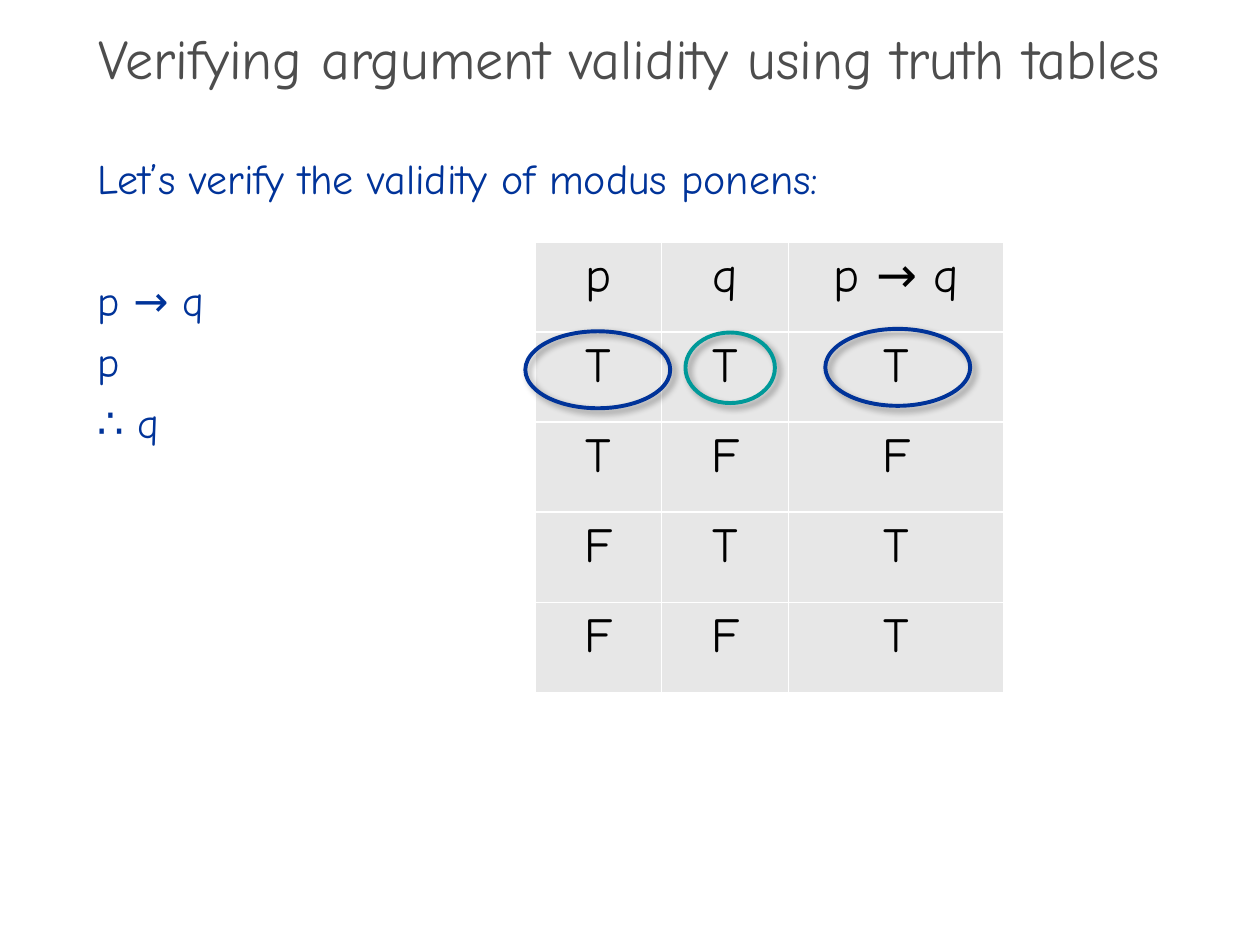
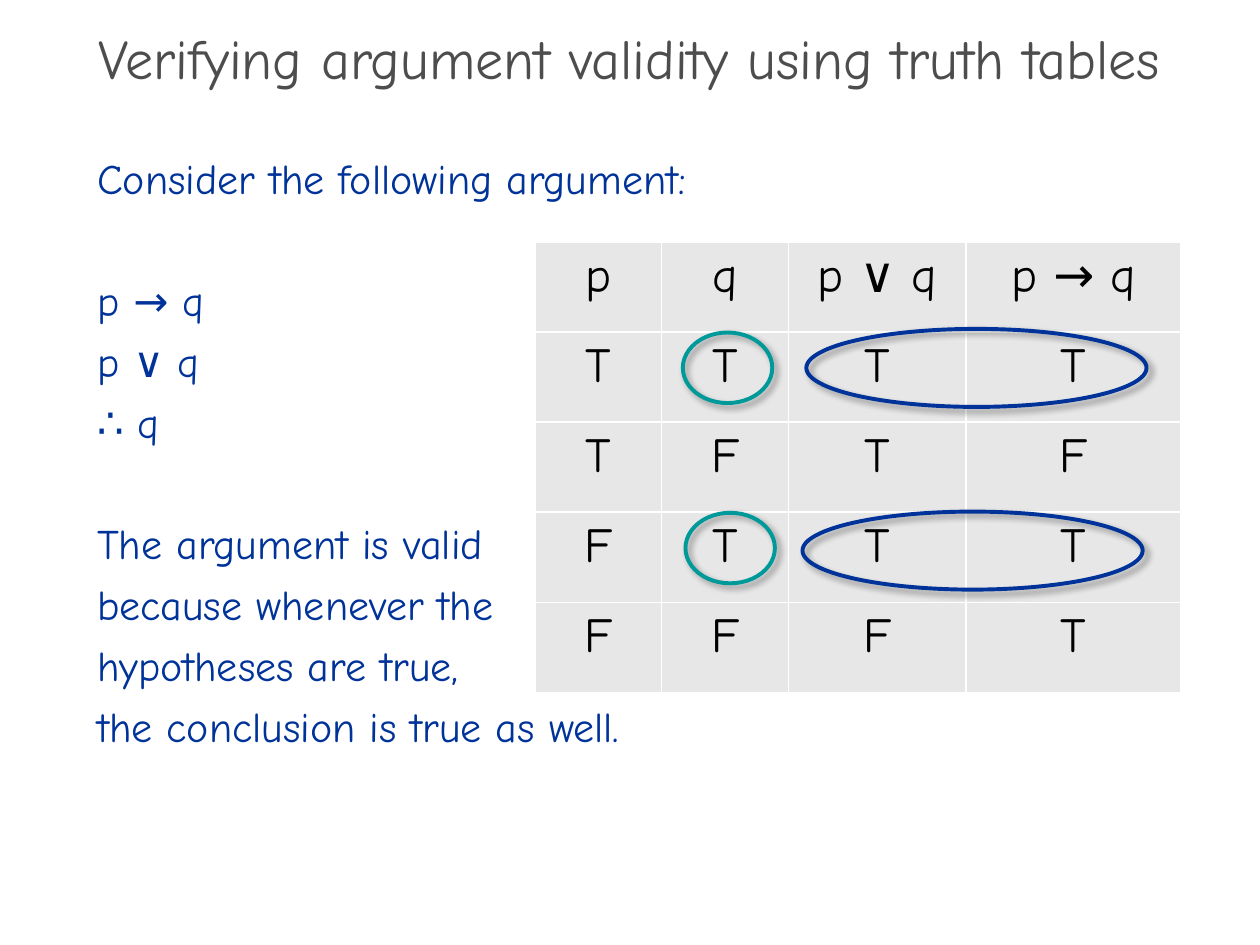
import pptx
import pptx.util
import pptx.dml.color
import pptx.enum.shapes
import pptx.enum.text
import pptx.oxml
import pptx.oxml.ns

Pt = pptx.util.Pt
PP_ALIGN = pptx.enum.text.PP_ALIGN
MSO_ANCHOR = pptx.enum.text.MSO_ANCHOR

FONT = "Comic Neue"
GREY, BLUE, TEAL = "4D4D4D", "003399", "009999"
BLACK, WHITE, CELL = "000000", "FFFFFF", "E7E7E7"
NS = pptx.oxml.ns.nsdecls("a")
TITLE = "Verifying argument validity using truth tables"
TITLE_BOX = (0, 19.44, 720, 36)
BODY_BOX = (48.24, 83.52, 617.76, 426.24)
TABLE_ORIGIN = (306, 138.24)
ROW_HEIGHT = 51.5
LINE_GAP = 6
BLOCK_GAP = 40.8
COLUMN_WIDTHS = {"p": 72, "q": 72.72, "p ∨ q": 101.3, "p → q": 123}


def rgb(color):
    return pptx.dml.color.RGBColor.from_string(color)


def place(sp, box):
    sp.left, sp.top, sp.width, sp.height = (Pt(v) for v in box)


def add_run(p, text, size, color):
    r = p.add_run()
    r.text = text
    r.font.name = FONT
    r.font.size = Pt(size)
    r.font.color.rgb = rgb(color)


def add_title(s, text, box):
    sp = s.shapes.title
    place(sp, box)
    tf = sp.text_frame
    tf.auto_size = pptx.enum.text.MSO_AUTO_SIZE.NONE
    tf.vertical_anchor = MSO_ANCHOR.MIDDLE
    p = tf.paragraphs[0]
    p.alignment = PP_ALIGN.CENTER
    p.line_spacing = 0.7
    add_run(p, text, 32, GREY)


def add_body(s, blocks, box):
    sp = s.placeholders[1]
    place(sp, box)
    tf = sp.text_frame
    tf.auto_size = pptx.enum.text.MSO_AUTO_SIZE.NONE
    p = tf.paragraphs[0]
    for block in blocks:
        for i, line in enumerate(block):
            if p.runs:
                p = tf.add_paragraph()
            p.space_before = Pt(0)
            p.space_after = Pt(BLOCK_GAP if i == len(block) - 1 else LINE_GAP)
            pPr = p._p.get_or_add_pPr()
            pPr.set("marL", "0")
            pPr.set("indent", "0")
            pPr.append(pptx.oxml.parse_xml(f"<a:buNone {NS}/>"))
            add_run(p, line, 24, BLUE)


def format_cell(cell, text):
    tcPr = cell._tc.get_or_add_tcPr()
    for side in ("lnL", "lnR", "lnT", "lnB"):
        tcPr.append(pptx.oxml.parse_xml(
            f'<a:{side} {NS} w="12700"><a:solidFill><a:srgbClr val="{WHITE}"/>'
            f"</a:solidFill></a:{side}>"))
    cell.fill.solid()
    cell.fill.fore_color.rgb = rgb(CELL)
    p = cell.text_frame.paragraphs[0]
    p.alignment = PP_ALIGN.CENTER
    p.space_before = Pt(5.6)
    add_run(p, text, 28, BLACK)


def add_truth_table(s, header, rows, origin):
    grid = [header] + [list(row) for row in rows]
    widths = [COLUMN_WIDTHS[name] for name in header]
    box = (*origin, sum(widths), ROW_HEIGHT * len(grid))
    tbl = s.shapes.add_table(len(grid), len(header), *(Pt(v) for v in box)).table
    tbl.first_row = False
    tbl.horz_banding = False
    for col, width in zip(tbl.columns, widths):
        col.width = Pt(width)
    for i, values in enumerate(grid):
        tbl.rows[i].height = Pt(ROW_HEIGHT)
        for j, value in enumerate(values):
            format_cell(tbl.cell(i, j), value)


def add_ring(s, origin, offset, size, color):
    x, y = (o + d for o, d in zip(origin, offset))
    sp = s.shapes.add_shape(pptx.enum.shapes.MSO_SHAPE.OVAL,
                            Pt(x), Pt(y), Pt(size[0]), Pt(size[1]))
    sp.fill.background()
    sp.line.color.rgb = rgb(color)
    sp.line.width = Pt(2.25)
    sp.shadow.inherit = False
    effects = sp._element.spPr.find(pptx.oxml.ns.qn("a:effectLst"))
    effects.append(pptx.oxml.parse_xml(
        f'<a:outerShdw {NS} blurRad="{Pt(4)}" dist="{Pt(3)}" dir="2700000" '
        f'algn="tl" rotWithShape="0"><a:srgbClr val="{BLACK}">'
        '<a:alpha val="40000"/></a:srgbClr></a:outerShdw>'))


def add_argument_slide(prs, blocks, header, rows, rings):
    s = prs.slides.add_slide(prs.slide_layouts[1])
    add_title(s, TITLE, TITLE_BOX)
    add_body(s, blocks, BODY_BOX)
    add_truth_table(s, header, rows, TABLE_ORIGIN)
    for offset, size, color in rings:
        add_ring(s, TABLE_ORIGIN, offset, size, color)


def main():
    prs = pptx.Presentation()
    prs.slide_width, prs.slide_height = Pt(720), Pt(540)
    premise, pair, conclusion = (82.8, 44), (194.4, 44.6), (51.1, 40.3)
    add_argument_slide(
        prs,
        [["Let’s verify the validity of modus ponens:"],
         ["p → q", "p", "∴ q"]],
        ["p", "q", "p → q"],
        ["TTT", "TFF", "FTT", "FFT"],
        [((165.6, 49.7), premise, BLUE),
         ((-5.8, 51.1), premise, BLUE),
         ((85.7, 51.8), conclusion, TEAL)])
    add_argument_slide(
        prs,
        [["Consider the following argument:"],
         ["p → q", "p ∨ q", "∴ q"],
         ["The argument is valid", "because whenever the",
          "hypotheses are true,", "the conclusion is true as well."]],
        ["p", "q", "p ∨ q", "p → q"],
        ["TTTT", "TFTF", "FTTT", "FFFT"],
        [((154.8, 49.7), pair, BLUE),
         ((152.6, 154.1), pair, BLUE),
         ((84.2, 51.8), conclusion, TEAL),
         ((85.7, 154.8), conclusion, TEAL)])
    prs.save("out.pptx")


if __name__ == "__main__":
    main()
